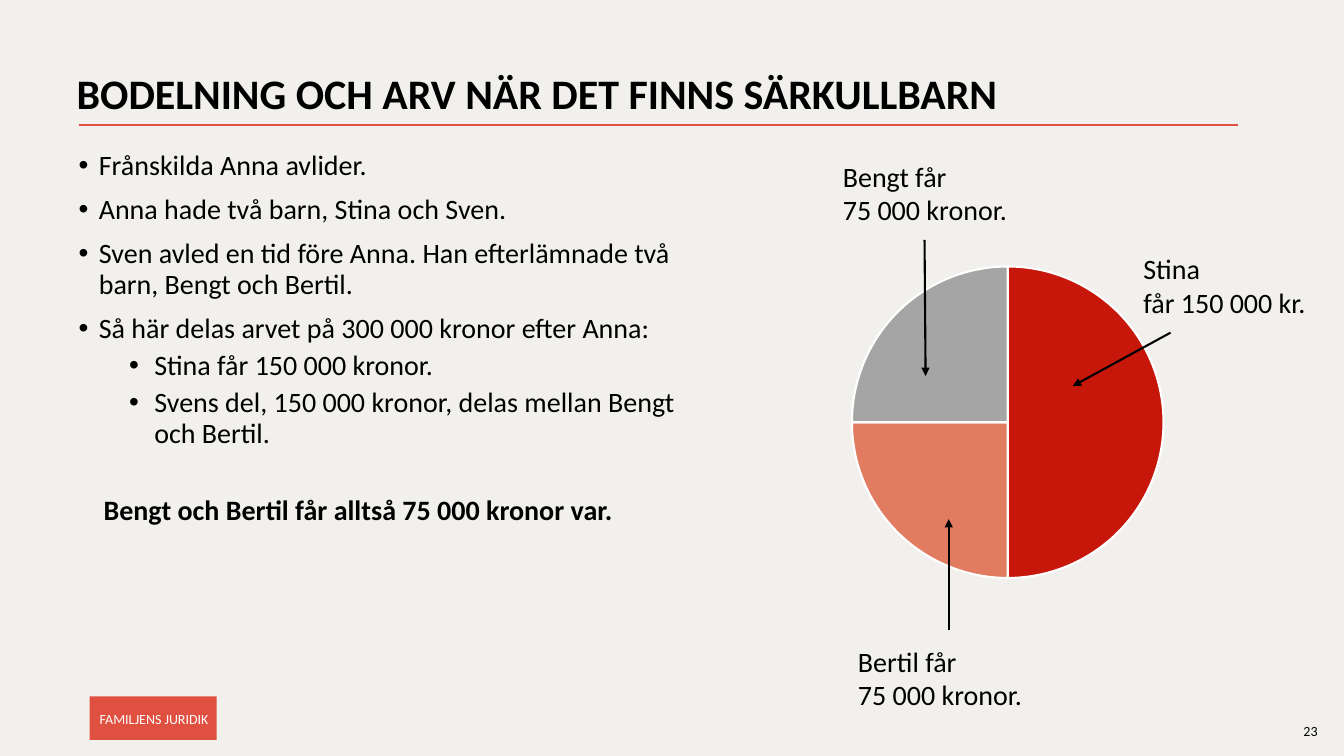
import pptx
import pptx.chart.data
import pptx.dml.color
import pptx.enum.chart
import pptx.enum.shapes
import pptx.enum.text
import pptx.oxml
import pptx.oxml.ns
import pptx.util
from lxml import etree
from pptx.util import Inches

COLORS = {
    "background": "F1F0EC",
    "accent": "E05040",
    "black": "000000",
    "white": "FFFFFF",
    "stina": "C7170A",
    "bertil": "E27C61",
    "bengt": "A5A5A5",
}
FONT = "Calibri"
qn = pptx.oxml.ns.qn
rgb = {name: pptx.dml.color.RGBColor.from_string(value) for name, value in COLORS.items()}


def write(para, text, size, color="black", bold=False):
    for index, line in enumerate(text.split("\n")):
        if index:
            para.add_line_break()
        span = para.add_run()
        span.text = line
        span.font.name = FONT
        span.font.size = pptx.util.Pt(size)
        span.font.bold = bold
        span.font.color.rgb = rgb[color]


def draw_line(page, start, end, color, arrow=False):
    line = page.shapes.add_connector(
        pptx.enum.shapes.MSO_CONNECTOR.STRAIGHT, *map(Inches, start + end))
    line.line.color.rgb = rgb[color]
    line.line.width = pptx.util.Pt(1.5)
    if arrow:
        etree.SubElement(line.line._get_or_add_ln(), qn("a:tailEnd"),
                         type="triangle", w="med", len="med")
    etree.SubElement(line._element.spPr, qn("a:effectLst"))


deck = pptx.Presentation()
deck.slide_width = Inches(13.33)
deck.slide_height = Inches(7.5)
page = deck.slides.add_slide(deck.slide_layouts[1])
page.background.fill.solid()
page.background.fill.fore_color.rgb = rgb["background"]

draw_line(page, (0.78, 1.24), (12.28, 1.24), "accent")

title = page.shapes.title
title.left, title.top, title.width, title.height = map(Inches, (0.66, 0.68, 11.5, 1.45))
title.text_frame.auto_size = pptx.enum.text.MSO_AUTO_SIZE.NONE
title.text_frame.vertical_anchor = pptx.enum.text.MSO_ANCHOR.TOP
para = title.text_frame.paragraphs[0]
para.alignment = pptx.enum.text.PP_ALIGN.LEFT
para.line_spacing = 0.9
write(para, "BODELNING OCH ARV NÄR DET FINNS SÄRKULLBARN", 30, bold=True)

body = page.placeholders[1]
body.left, body.top, body.width, body.height = map(Inches, (0.68, 1.45, 6.19, 3.36))
body.text_frame.auto_size = pptx.enum.text.MSO_AUTO_SIZE.NONE
bullets = [
    (0, "Frånskilda Anna avlider."),
    (0, "Anna hade två barn, Stina och Sven."),
    (0, "Sven avled en tid före Anna. Han efterlämnade två barn, Bengt och Bertil."),
    (0, "Så här delas arvet på 300 000 kronor efter Anna:"),
    (1, "Stina får 150 000 kronor."),
    (1, "Svens del, 150 000 kronor, delas mellan Bengt och Bertil."),
]
LEVELS = [(0.2, 0.2, 10), (0.75, 0.25, 5)]
for index, (level, text) in enumerate(bullets):
    para = body.text_frame.add_paragraph() if index else body.text_frame.paragraphs[0]
    margin, hanging, space = LEVELS[level]
    para.level = level
    properties = para._p.get_or_add_pPr()
    properties.set("marL", str(Inches(margin)))
    properties.set("indent", str(-Inches(hanging)))
    etree.SubElement(properties, qn("a:buFont"), typeface="Arial")
    etree.SubElement(properties, qn("a:buChar"), char="•")
    para.line_spacing = 0.9
    para.space_before = pptx.util.Pt(space if index else 0)
    write(para, text, 20)

conclusion = page.shapes.add_textbox(*map(Inches, (0.43, 4.84, 5.76, 0.44)))
conclusion.text_frame.word_wrap = True
para = conclusion.text_frame.paragraphs[0]
para._p.get_or_add_pPr().set("marL", str(Inches(0.5)))
write(para, "Bengt och Bertil får alltså 75 000 kronor var.", 20, bold=True)

shares = pptx.chart.data.CategoryChartData()
shares.categories = ["1", "2", "3"]
shares.add_series("Series 1", (50, 25, 25))
chart = page.shapes.add_chart(
    pptx.enum.chart.XL_CHART_TYPE.PIE, *map(Inches, (7.83, 2.51, 4.33, 3.36)), shares).chart
chart.has_title = False
chart.has_legend = False
chart.font.name = FONT
chart.font.size = pptx.util.Pt(10)
chart.font.color.rgb = rgb["black"]
pie = chart.plots[0]
pie.vary_by_categories = True
for index, heir in enumerate(("stina", "bertil", "bengt")):
    slice_format = pie.series[0].points[index].format
    slice_format.fill.solid()
    slice_format.fill.fore_color.rgb = rgb[heir]
    slice_format.line.color.rgb = rgb["white"]
    slice_format.line.width = pptx.util.Pt(1.5)
plot_area = chart._chartSpace.chart.plotArea
for layout in plot_area.findall(qn("c:layout")):
    plot_area.remove(layout)
layout = etree.Element(qn("c:layout"))
manual = etree.SubElement(layout, qn("c:manualLayout"))
for tag, value in (("layoutTarget", "inner"), ("xMode", "edge"), ("yMode", "edge"),
                   ("x", "0.14"), ("y", "0.04"), ("w", "0.72"), ("h", "0.92")):
    etree.SubElement(manual, qn("c:" + tag), val=value)
plot_area.insert(0, layout)

heirs = [
    ("Bengt får\n75 000 kronor.", (8.36, 1.58, 1.64, 0.67), False, (9.17, 2.38), (9.18, 3.73)),
    ("Bertil får\n75 000 kronor.", (8.51, 6.39, 2.26, 0.67), True, (9.41, 6.25), (9.41, 5.15)),
    ("Stina\nfår 150 000 kr.", (11.34, 2.5, 1.62, 0.67), False, (11.61, 3.3), (10.64, 3.83)),
]
for text, place, wrap, start, end in heirs:
    draw_line(page, start, end, "black", arrow=True)
    label = page.shapes.add_textbox(*map(Inches, place))
    frame = label.text_frame
    frame.word_wrap = wrap
    frame.margin_left = frame.margin_top = frame.margin_right = frame.margin_bottom = 0
    write(frame.paragraphs[0], text, 20)

badge = page.shapes.add_shape(
    pptx.enum.shapes.MSO_SHAPE.RECTANGLE, *map(Inches, (0.89, 6.91, 1.26, 0.43)))
badge.shadow.inherit = False
badge.fill.solid()
badge.fill.fore_color.rgb = rgb["accent"]
badge.line.fill.background()
frame = badge.text_frame
frame.word_wrap = False
frame.vertical_anchor = pptx.enum.text.MSO_ANCHOR.MIDDLE
frame.margin_left, frame.margin_top, frame.margin_right, frame.margin_bottom = map(
    Inches, (0.1, 0.08, 0.04, 0.05))
frame.paragraphs[0].alignment = pptx.enum.text.PP_ALIGN.LEFT
frame.paragraphs[0].line_spacing = 0.9
write(frame.paragraphs[0], "FAMILJENS JURIDIK", 10, "white")

number = page.shapes.add_textbox(*map(Inches, (12.83, 7.12, 0.4, 0.27)))
number.text_frame.word_wrap = True
write(number.text_frame.paragraphs[0], "23", 10)

deck.save("out.pptx")
